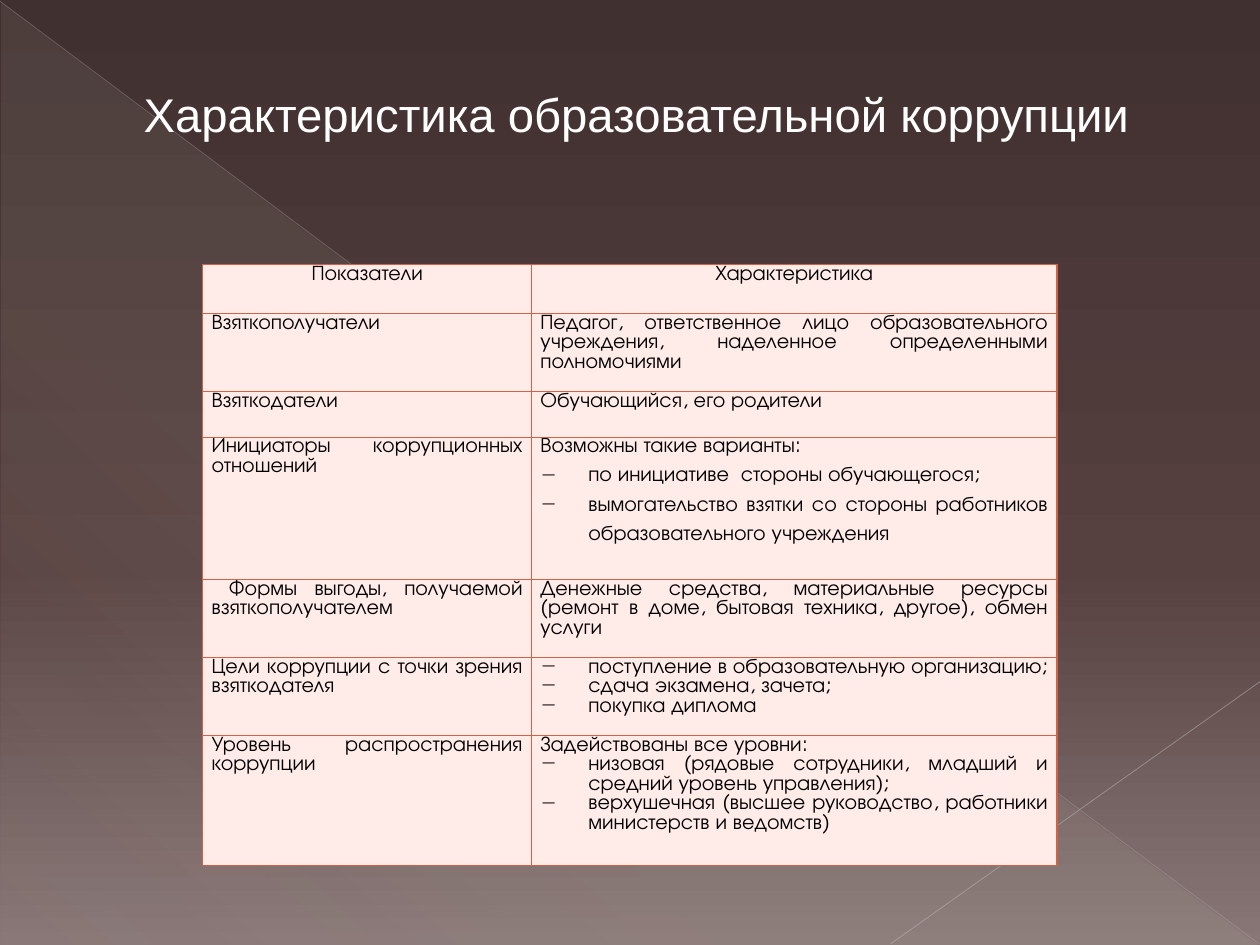
from dataclasses import dataclass

from lxml.etree import SubElement as Sub
from pptx import Presentation
from pptx.dml.color import RGBColor
from pptx.enum.shapes import MSO_CONNECTOR as Conn, MSO_SHAPE as Shape
from pptx.enum.text import MSO_ANCHOR as Anchor, MSO_AUTO_SIZE as Auto, PP_ALIGN as Align
from pptx.oxml.ns import qn
from pptx.util import Inches, Pt

COLORS = {
    "white": "FFFFFF", "black": "000000", "cell": "FFECE9", "border": "D26245",
    "top": "413030", "mid": "564040", "base": "897777", "glow": "CCD1B9",
    "fall": "BCB9B9", "rise": "C3C0C0",
}
BODY = "TeX Gyre Adventor"
WIDTHS = (2.61, 4.17)


@dataclass
class Stop:
    pos: int
    color: str
    alpha: int = 100


@dataclass
class Ray:
    start: tuple[float, float]
    end: tuple[float, float]
    color: str
    width: float
    alpha: int


@dataclass
class Item:
    text: str
    bullet: bool = False
    space: float | None = None


@dataclass
class Row:
    height: float
    label: str
    items: list[Item]


RAYS = [
    Ray((0, 0.01), (9.99, 7.49), "fall", 0.39, 35),
    Ray((10, 5.41), (7.07, 7.49), "rise", 0.47, 45),
]
ROWS = [
    Row(0.39, "Показатели", [Item("Характеристика")]),
    Row(0.62, "Взяткополучатели", [
        Item("Педагог, ответственное лицо образовательного учреждения, "
             "наделенное определенными полномочиями ")]),
    Row(0.36, "Взяткодатели", [Item("Обучающийся, его родители")]),
    Row(1.13, "Инициаторы коррупционных отношений", [
        Item("Возможны такие варианты:"),
        Item("по инициативе  стороны обучающегося;", True, 1.5),
        Item("вымогательство взятки со стороны работников "
             "образовательного учреждения", True, 1.5)]),
    Row(0.62, " Формы выгоды, получаемой взяткополучателем", [
        Item("Денежные средства, материальные ресурсы (ремонт в доме, "
             "бытовая техника, другое), обмен услуги")]),
    Row(0.62, "Цели коррупции с точки зрения взяткодателя", [
        Item("поступление в образовательную организацию;", True),
        Item("сдача экзамена, зачета;", True),
        Item("покупка диплома ", True)]),
    Row(1.03, "Уровень распространения коррупции", [
        Item("Задействованы все уровни:"),
        Item("низовая (рядовые сотрудники, младший и средний уровень "
             "управления);", True),
        Item("верхушечная (высшее руководство, работники министерств "
             "и ведомств)", True)]),
]


def rgb(name: str) -> RGBColor:
    return RGBColor.from_string(COLORS[name])


def add_color(parent, name: str, alpha: int = 100) -> None:
    node = Sub(parent, qn("a:srgbClr"), val=COLORS[name])
    if alpha < 100:
        Sub(node, qn("a:alpha"), val=str(alpha * 1000))


def blend(fill, root, stops: list[Stop], angle: int) -> None:
    """Give a fill any number of gradient stops."""
    fill.gradient()
    grad = root.find(".//" + qn("a:gradFill"))
    for node in list(grad):
        grad.remove(node)
    group = Sub(grad, qn("a:gsLst"))
    for stop in stops:
        add_color(Sub(group, qn("a:gs"), pos=str(stop.pos * 1000)),
                  stop.color, stop.alpha)
    Sub(grad, qn("a:lin"), ang=str(angle * 60000), scaled="0")


def write(para, text: str, *, font: str = BODY, size: float = 12,
          color: str = "black", align=Align.JUSTIFY, left: float = 0,
          hang: float = 0, bullet: str = "", space: float | None = None) -> None:
    para.alignment = align
    if space:
        para.line_spacing = space
    props = para._p.get_or_add_pPr()
    props.set("marL", str(Inches(left)))
    props.set("indent", str(Inches(-hang)))
    if bullet:
        Sub(props, qn("a:buChar"), char=bullet)
    run = para.add_run()
    run.text = text
    run.font.name, run.font.size = font, Pt(size)
    run.font.color.rgb = rgb(color)


def draw_ray(slide, ray: Ray) -> None:
    points = [Inches(n) for n in ray.start + ray.end]
    line = slide.shapes.add_connector(Conn.STRAIGHT, *points)
    line.line.width = Pt(ray.width)
    line.line.color.rgb = rgb(ray.color)
    clr = line._element.spPr.find(".//" + qn("a:srgbClr"))
    Sub(clr, qn("a:alpha"), val=str(ray.alpha * 1000))
    Sub(line._element.spPr, qn("a:effectLst"))


def fill_cell(cell, items: list[Item], align) -> None:
    cell.margin_left = cell.margin_right = Inches(0.07)
    cell.margin_top = cell.margin_bottom = 0
    props = cell._tc.get_or_add_tcPr()
    for side in ("lnL", "lnR", "lnT", "lnB"):
        edge = Sub(props, qn("a:" + side), w=str(Pt(0.75)))
        add_color(Sub(edge, qn("a:solidFill")), "border")
    cell.fill.solid()
    cell.fill.fore_color.rgb = rgb("cell")
    frame = cell.text_frame
    for i, item in enumerate(items):
        para = frame.add_paragraph() if i else frame.paragraphs[0]
        dent = 0.38 if item.bullet else 0
        write(para, item.text, align=align, left=dent, hang=dent,
              bullet="−" if item.bullet else "", space=item.space)


def draw_table(slide, rows: list[Row]) -> None:
    high = sum(row.height for row in rows)
    table = slide.shapes.add_table(
        len(rows), len(WIDTHS), Inches(1.61), Inches(2.1),
        Inches(sum(WIDTHS)), Inches(high)).table
    table.first_row = table.horz_banding = False
    for col, width in zip(table.columns, WIDTHS):
        col.width = Inches(width)
    for i, row in enumerate(rows):
        table.rows[i].height = Inches(row.height)
        align = Align.JUSTIFY if i else Align.CENTER
        fill_cell(table.cell(i, 0), [Item(row.label)], align)
        fill_cell(table.cell(i, 1), row.items, align)


def main() -> None:
    deck = Presentation()
    deck.slide_width, deck.slide_height = Inches(10), Inches(7.5)
    slide = deck.slides.add_slide(deck.slide_layouts[5])

    # Background and light rays
    blend(slide.background.fill, slide._element,
          [Stop(0, "top"), Stop(60, "mid"), Stop(100, "base")], 90)
    glow = slide.shapes.add_shape(Shape.RIGHT_TRIANGLE, Inches(0.01),
                                  Inches(0.02), Inches(9.98), Inches(7.48))
    glow.shadow.inherit = False
    glow.line.fill.background()
    blend(glow.fill, glow._element,
          [Stop(0, "glow", 10), Stop(70, "glow", 8), Stop(100, "glow", 1)], 133)
    for ray in RAYS:
        draw_ray(slide, ray)

    # Title, in front of the rays
    title = slide.shapes.title
    title.left, title.top = Inches(0.51), Inches(0.44)
    title.width, title.height = Inches(9), Inches(0.93)
    slide.shapes._spTree.append(title._element)
    frame = title.text_frame
    frame.word_wrap, frame.auto_size = True, Auto.NONE
    frame.vertical_anchor = Anchor.MIDDLE
    write(frame.paragraphs[0], "Характеристика образовательной коррупции",
          font="Arial", size=27, color="white", align=Align.LEFT, left=0.53)

    # Table of traits
    draw_table(slide, ROWS)
    deck.save("out.pptx")


if __name__ == "__main__":
    main()
